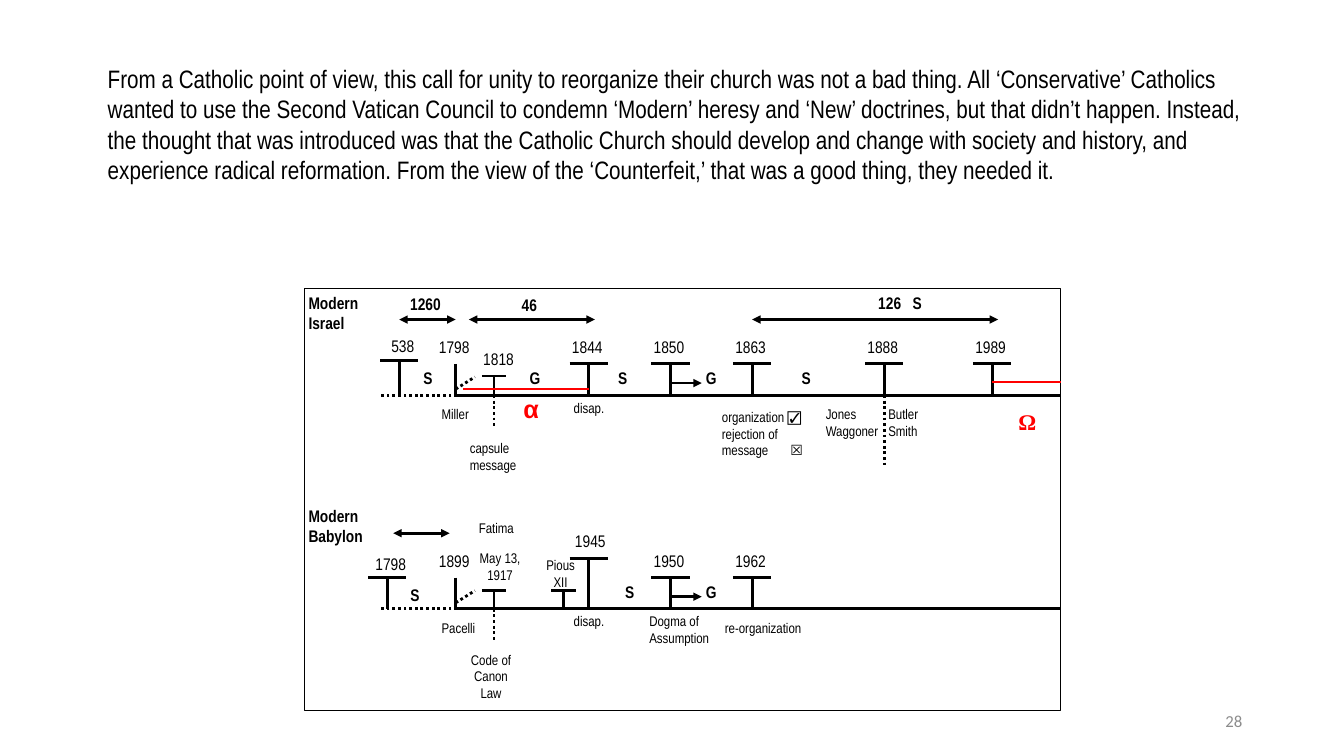
from dataclasses import dataclass

import lxml.etree
import pptx
import pptx.dml.color
import pptx.enum.dml
import pptx.enum.shapes
import pptx.enum.text
import pptx.oxml.ns
import pptx.util
from pptx.shapes.shapetree import SlideShapes

Align = pptx.enum.text.PP_ALIGN
Anchor = pptx.enum.text.MSO_ANCHOR
Color = pptx.dml.color.RGBColor
qn = pptx.oxml.ns.qn

EMU_PER_PX = 9144  # 100 px to the inch
BLACK = Color(0x00, 0x00, 0x00)
RED = Color(0xFF, 0x00, 0x00)
GREY = Color(0x8C, 0x8C, 0x8C)
NARROW = "Arial Narrow"
SYMBOLS = "☑☒"
ISRAEL_BASE = 392
BABYLON_BASE = 604
FRAME_RIGHT = 1052

INTRO = (
    "From a Catholic point of view, this call for unity to reorganize their church was not a bad thing. "
    "All ‘Conservative’ Catholics wanted to use the Second Vatican Council to condemn ‘Modern’ heresy and "
    "‘New’ doctrines, but that didn’t happen. Instead, the thought that was introduced was that the "
    "Catholic Church should develop and change with society and history, and experience radical "
    "reformation. From the view of the ‘Counterfeit,’ that was a good thing, they needed it."
)


@dataclass(frozen=True)
class Label:
    """Text with one paragraph per line; "|" divides a line into runs."""
    text: str
    left: int
    top: int
    width: int
    height: int
    size: int = 10
    bold: bool = False
    align: Align = Align.LEFT
    color: Color = BLACK
    font: str = NARROW
    inset: tuple[int, int] = (4, 4)
    anchor: Anchor = Anchor.TOP
    tab: int = 0


@dataclass(frozen=True)
class Stroke:
    x1: int
    y1: int
    x2: int
    y2: int
    color: Color = BLACK
    dotted: bool = False
    heads: tuple[str, ...] = ()


@dataclass(frozen=True)
class Marker:
    """A stem on a timeline, with an optional crossbar and year."""
    year: str
    x: int
    top: int
    base: int
    half_bar: int = 19
    year_shift: int = -25
    year_rise: int = 31


BOTH_ENDS = ("headEnd", "tailEnd")
END = ("tailEnd",)

MARKERS = (
    Marker("538", 396, 358, ISRAEL_BASE, year_shift=-20, year_rise=29),
    Marker("1798", 452, 361, ISRAEL_BASE, half_bar=0),
    Marker("1818", 490, 373, ISRAEL_BASE, half_bar=12, year_shift=-19),
    Marker("1844", 584, 361, ISRAEL_BASE),
    Marker("1850", 665, 361, ISRAEL_BASE),
    Marker("1863", 746, 361, ISRAEL_BASE),
    Marker("1888", 877, 361, ISRAEL_BASE),
    Marker("1989", 984, 361, ISRAEL_BASE),
    Marker("1798", 384, 573, BABYLON_BASE, year_shift=-20, year_rise=28),
    Marker("1899", 452, 573, BABYLON_BASE, half_bar=0),
    Marker("", 490, 586, BABYLON_BASE, half_bar=12),
    Marker("", 559, 586, BABYLON_BASE, half_bar=12),
    Marker("1945", 584, 554, BABYLON_BASE, year_shift=-22),
    Marker("1950", 665, 573, BABYLON_BASE),
    Marker("1962", 746, 573, BABYLON_BASE),
)

STROKES = (
    Stroke(396, 317, 452, 317, heads=BOTH_ENDS),
    Stroke(465, 317, 590, 317, heads=BOTH_ENDS),
    Stroke(746, 317, 990, 317, heads=BOTH_ENDS),
    Stroke(390, 529, 446, 529, heads=BOTH_ENDS),
    Stroke(877, ISRAEL_BASE, 877, 461, dotted=True),
    Stroke(459, 386, 584, 386, RED),
    Stroke(984, 379, FRAME_RIGHT, 379, RED),
)

LABELS = (
    Label("28", 942, 695, 300, 40, 12, align=Align.RIGHT, color=GREY, font="Calibri",
          inset=(10, 5), anchor=Anchor.MIDDLE),
    Label(INTRO, 97, 58, 1161, 131, 18, inset=(10, 5)),
    Label("Modern\nIsrael", 302, 286, 64, 47, 12, True),
    Label("Modern\nBabylon", 302, 498, 64, 47, 12, True),
    Label("1260", 402, 287, 40, 31, 12, True, Align.CENTER),
    Label("46", 510, 288, 30, 31, 12, True, Align.CENTER),
    Label("126\tS", 867, 286, 61, 31, 12, True, tab=34),
    Label("α", 515, 386, 31, 41, 18, True, color=RED, font="Arial"),
    Label("Ω", 1006, 401, 31, 38, 16, True, color=RED, font="Times New Roman"),
    Label("Miller", 434, 398, 44, 31),
    Label("capsule message", 462, 432, 56, 50),
    Label("disap.", 565, 392, 44, 31),
    Label("organization |☑\nrejection of message\t|☒", 712, 401, 94, 62, tab=68),
    Label("Jones\nWaggoner", 815, 398, 62, 62),
    Label("Butler\nSmith", 877, 398, 62, 62),
    Label("Fatima", 471, 511, 50, 25),
    Label("May 13,\n1917", 471, 541, 50, 44, align=Align.CENTER),
    Label("Pious XII", 534, 548, 44, 44, align=Align.CENTER),
    Label("Pacelli", 434, 611, 44, 31),
    Label("Code of Canon Law", 459, 642, 56, 56, align=Align.CENTER),
    Label("disap.", 565, 604, 44, 31),
    Label("Dogma of Assumption", 640, 604, 69, 50),
    Label("re-organization", 715, 611, 84, 28),
)

PERIOD_LETTERS = (
    ("S", 409, 361), ("G", 515, 361), ("S", 602, 361), ("G", 690, 361), ("S", 784, 361),
    ("S", 396, 576), ("S", 609, 573), ("G", 690, 573),
)


def px(length: int) -> pptx.util.Emu:
    return pptx.util.Emu(length * EMU_PER_PX)


def draw_label(shapes: SlideShapes, label: Label) -> None:
    box = shapes.add_textbox(px(label.left), px(label.top), px(label.width), px(label.height))
    frame = box.text_frame
    frame.word_wrap = True
    frame.vertical_anchor = label.anchor
    frame.margin_left = frame.margin_right = px(label.inset[0])
    frame.margin_top = frame.margin_bottom = px(label.inset[1])
    for index, line in enumerate(label.text.split("\n")):
        para = frame.add_paragraph() if index else frame.paragraphs[0]
        para.alignment = label.align
        if "\t" in line:
            tabs = lxml.etree.SubElement(para._p.get_or_add_pPr(), qn("a:tabLst"))
            lxml.etree.SubElement(tabs, qn("a:tab"), pos=str(px(label.tab)), algn="l")
        for piece in line.split("|"):
            span = para.add_run()
            span.text = piece
            span.font.name = "Arial" if piece in SYMBOLS else label.font
            span.font.size = pptx.util.Pt(label.size)
            span.font.bold = label.bold
            span.font.color.rgb = label.color


def draw_stroke(shapes: SlideShapes, stroke: Stroke) -> None:
    connector = shapes.add_connector(
        pptx.enum.shapes.MSO_CONNECTOR.STRAIGHT,
        px(stroke.x1), px(stroke.y1), px(stroke.x2), px(stroke.y2))
    connector.line.color.rgb = stroke.color
    connector.line.width = pptx.util.Pt(2)
    if stroke.dotted:
        connector.line.dash_style = pptx.enum.dml.MSO_LINE.ROUND_DOT
    properties = connector._element.spPr
    for head in stroke.heads:
        lxml.etree.SubElement(properties.find(qn("a:ln")), qn(f"a:{head}"), type="triangle")
    lxml.etree.SubElement(properties, qn("a:effectLst"))


def draw_marker(shapes: SlideShapes, marker: Marker) -> None:
    draw_stroke(shapes, Stroke(marker.x, marker.top, marker.x, marker.base))
    if marker.half_bar:
        draw_stroke(shapes, Stroke(marker.x - marker.half_bar, marker.top,
                                   marker.x + marker.half_bar, marker.top))
    if marker.year:
        draw_label(shapes, Label(marker.year, marker.x + marker.year_shift,
                                 marker.top - marker.year_rise, 47, 28, 12, align=Align.CENTER))


def draw_timeline(shapes: SlideShapes, base: int) -> None:
    """Draw the strokes that both timelines share."""
    for stroke in (
        Stroke(452, base, FRAME_RIGHT, base),
        Stroke(459, base, 377, base, dotted=True),
        Stroke(452, base - 6, 471, base - 18, dotted=True),
        Stroke(490, base, 490, base + 31, dotted=True),
        Stroke(665, base - 12, 696, base - 12, heads=END),
    ):
        draw_stroke(shapes, stroke)


def draw_frame(shapes: SlideShapes) -> None:
    frame = shapes.add_shape(pptx.enum.shapes.MSO_SHAPE.RECTANGLE,
                             px(302), px(286), px(FRAME_RIGHT - 302), px(419))
    frame.shadow.inherit = False
    frame.fill.background()
    frame.line.color.rgb = BLACK
    frame.line.width = pptx.util.Pt(0.25)


def main() -> None:
    deck = pptx.Presentation()
    deck.slide_width, deck.slide_height = px(1333), px(750)
    shapes = deck.slides.add_slide(deck.slide_layouts[6]).shapes
    draw_frame(shapes)
    for base in (ISRAEL_BASE, BABYLON_BASE):
        draw_timeline(shapes, base)
    for marker in MARKERS:
        draw_marker(shapes, marker)
    for stroke in STROKES:
        draw_stroke(shapes, stroke)
    for label in LABELS:
        draw_label(shapes, label)
    for letter, left, top in PERIOD_LETTERS:
        draw_label(shapes, Label(letter, left, top, 31, 31, 12, True, Align.CENTER))
    deck.save("out.pptx")


if __name__ == "__main__":
    main()
